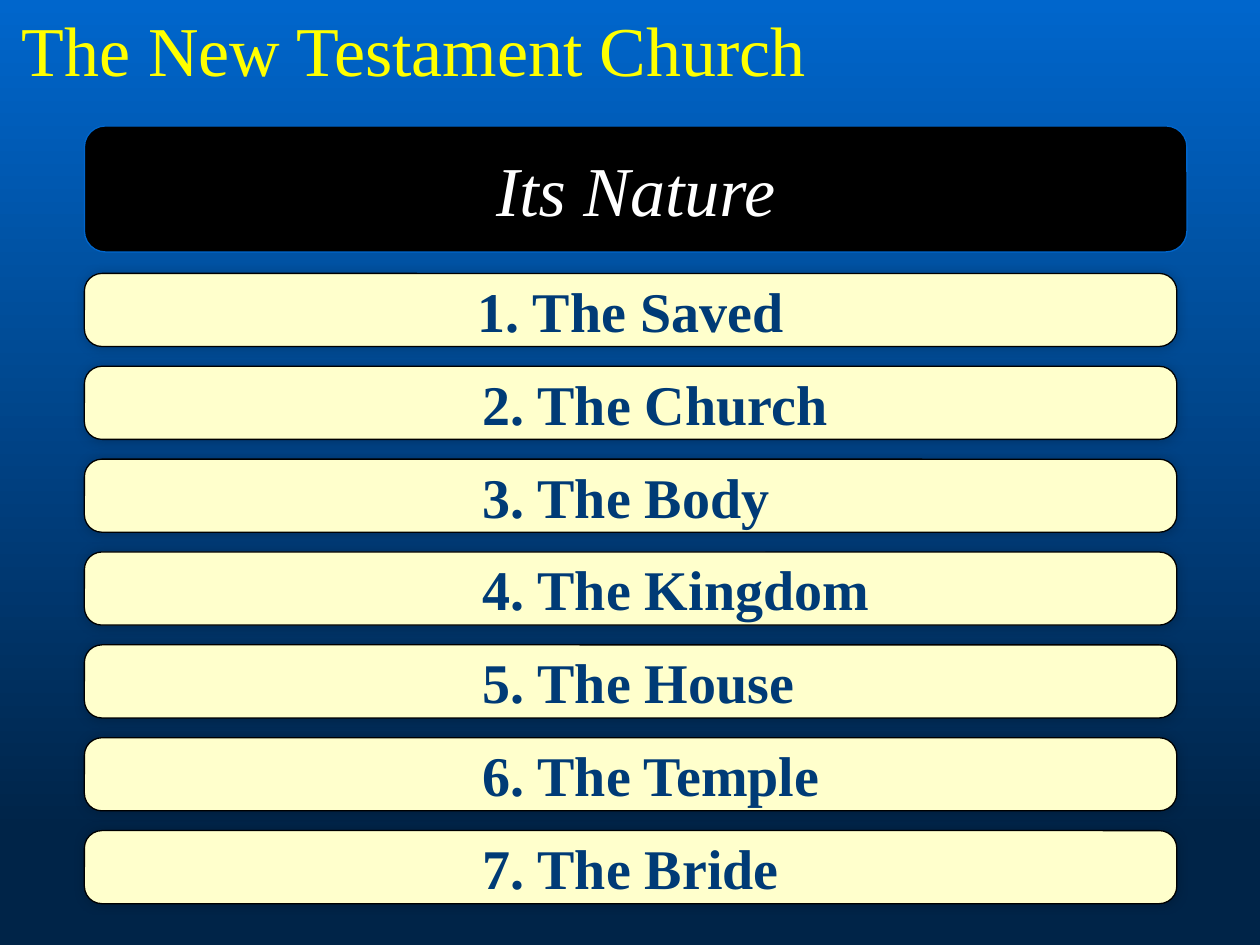
"""Build the slide listing seven descriptions of the New Testament church."""
from lxml import etree
from pptx import Presentation, util as u
from pptx.dml.color import RGBColor
from pptx.enum import shapes, text
from pptx.oxml import parse_xml
from pptx.oxml.ns import nsdecls

TITLE = "The New Testament Church"
HEADING = "Its Nature"
NAMES = ["Saved", "Church", "Body", "Kingdom", "House", "Temple", "Bride"]

BLUE = RGBColor(0x00, 0x66, 0xCC)
NIGHT = RGBColor(0x00, 0x24, 0x48)
NAVY = RGBColor(0x00, 0x3B, 0x76)
CREAM = RGBColor(0xFF, 0xFF, 0xCC)
YELLOW = RGBColor(0xFF, 0xFF, 0x00)
WHITE = RGBColor(0xFF, 0xFF, 0xFF)
BLACK = RGBColor(0x00, 0x00, 0x00)

FONT = "Times New Roman"
LEFT, BAR_TOP, BAR_STEP = 0.67, 2.17, 0.737
BAR_W, BAR_H = 8.67, 0.58
TEXT_INDENT = 3.12

SHADOW = (f'<a:effectLst {nsdecls("a")}><a:outerShdw blurRad="{u.Pt(6)}" dist="0" dir="13500000">'
          f'<a:srgbClr val="{BLACK}"><a:alpha val="20000"/></a:srgbClr>'
          '</a:outerShdw></a:effectLst>')
OUTLINE = (f'<a:ln {nsdecls("a")} w="{u.Pt(0.75)}"><a:solidFill>'
           f'<a:srgbClr val="{BLUE}"/></a:solidFill></a:ln>')


def write(sp, words, size, color, align, bold=False, italic=False):
    p = sp.text_frame.paragraphs[0]
    p.alignment = align
    r = p.add_run()
    r.text = words
    r.font.name, r.font.size = FONT, u.Pt(size)
    r.font.bold, r.font.italic = bold, italic
    r.font.color.rgb = color
    return r


def add_bar(s, top, width, height, fill, line):
    sp = s.shapes.add_shape(shapes.MSO_SHAPE.ROUNDED_RECTANGLE,
                            *map(u.Inches, (LEFT, top, width, height)))
    sp.shadow.inherit = False
    sp.fill.solid()
    sp.fill.fore_color.rgb = fill
    sp.line.color.rgb = line
    sp.line.width = u.Pt(0.75)
    sp.text_frame.word_wrap = True
    sp.text_frame.vertical_anchor = text.MSO_ANCHOR.MIDDLE
    return sp


def add_title(s):
    sp = s.shapes.add_textbox(*map(u.Inches, (0.04, 0, 6.49, 0.77)))
    tf = sp.text_frame
    tf.word_wrap = False
    tf.auto_size = text.MSO_AUTO_SIZE.SHAPE_TO_FIT_TEXT
    r = write(sp, TITLE, 40, YELLOW, text.PP_ALIGN.CENTER)
    r.font._element.insert(0, parse_xml(OUTLINE))


def add_names(s):
    for i, name in enumerate(NAMES):
        sp = add_bar(s, BAR_TOP + i * BAR_STEP, BAR_W, BAR_H, CREAM, BLACK)
        sp.adjustments[0] = 0.24
        effects = sp._element.spPr.find("{*}effectLst")
        effects.getparent().replace(effects, etree.fromstring(SHADOW))
        align = text.PP_ALIGN.LEFT if i else text.PP_ALIGN.CENTER
        if i:
            sp.text_frame.margin_left = u.Inches(TEXT_INDENT)
        write(sp, f"{i + 1}. The {name}", 32, NAVY, align, bold=True)


def main():
    prs = Presentation()
    prs.slide_width, prs.slide_height = u.Inches(10), u.Inches(7.5)
    s = prs.slides.add_slide(prs.slide_layouts[6])
    fill = s.background.fill
    fill.gradient()
    fill.gradient_angle = 270
    for stop, color, position in zip(fill.gradient_stops, (BLUE, NIGHT), (0, 0.88)):
        stop.color.rgb = color
        stop.position = position
    add_title(s)
    heading = add_bar(s, 1, 8.75, 1, BLACK, BLUE)
    write(heading, HEADING, 40, WHITE, text.PP_ALIGN.CENTER, italic=True)
    add_names(s)
    prs.save("out.pptx")


if __name__ == "__main__":
    main()
